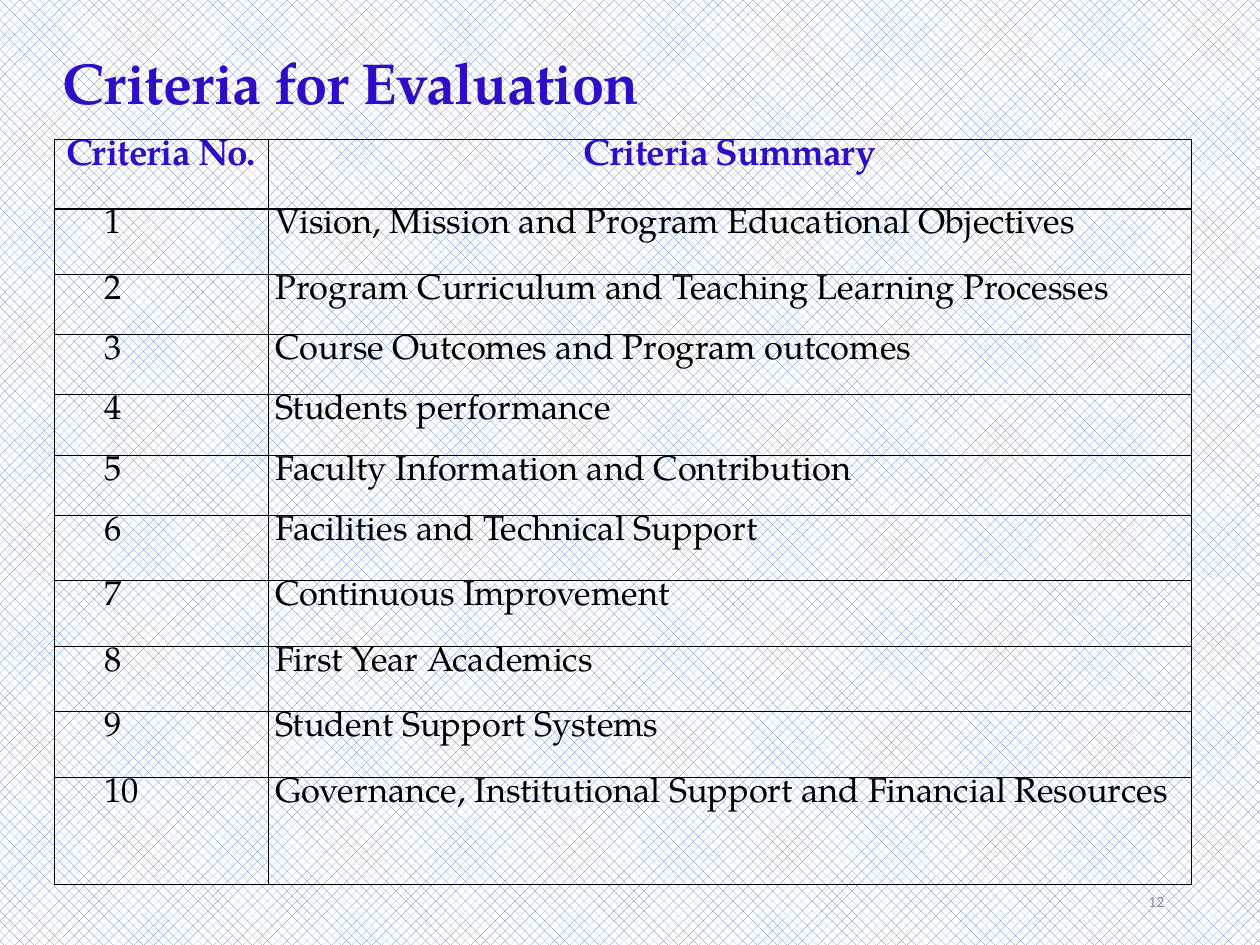
"""Build the slide that lists the ten criteria for evaluation."""
from lxml import etree
from pptx import Presentation
from pptx import util as u
from pptx.dml.color import RGBColor
from pptx.enum import dml, text
from pptx.oxml import ns

THEME = {
    "accent": "2F0CC6", "ink": "000000", "muted": "8C8C8C",
    "pattern": "4472C4", "paper": "FFFFFF",
    "serif": "TeX Gyre Pagella", "sans": "Calibri",
    "title": 47, "header": 30, "body": 28, "number": 12.8, "border": 1,
}
HEADINGS = ("Criteria No.", "Criteria Summary")
SUMMARIES = (
    "Vision, Mission and Program Educational Objectives",
    "Program Curriculum and Teaching Learning Processes",
    "Course Outcomes and Program outcomes",
    "Students performance",
    "Faculty Information and Contribution",
    "Facilities and Technical Support",
    "Continuous Improvement",
    "First Year Academics",
    "Student Support Systems",
    "Governance, Institutional Support and Financial Resources",
)
COLUMN_WIDTHS = (2.42, 10.42)
ROW_HEIGHTS = (0.78, 0.74, *[0.68] * 4, *[0.74] * 4, 1.21)
LEFT = 0.61


def write(paragraph, words, size, color, face="serif", bold=False, align="LEFT"):
    """Put one formatted run into a paragraph."""
    paragraph.alignment = getattr(text.PP_ALIGN, align)
    run = paragraph.add_run()
    run.text = words
    formats = {"name": THEME[face], "size": u.Pt(THEME[size]), "bold": bold}
    for name, value in formats.items():
        setattr(run.font, name, value)
    run.font.color.rgb = RGBColor.from_string(THEME[color])
    if bold:
        paragraph.line_spacing = 0.9
        run.font._element.set("spc", "-70")


def add_borders(cell):
    """Draw a thin line on all four sides of a cell."""
    properties = cell._tc.get_or_add_tcPr()
    for position, side in enumerate(("lnL", "lnR", "lnT", "lnB")):
        line = etree.Element(ns.qn(f"a:{side}"), w=str(u.Pt(THEME["border"])))
        fill = etree.SubElement(line, ns.qn("a:solidFill"))
        etree.SubElement(fill, ns.qn("a:srgbClr"), val=THEME["ink"])
        properties.insert(position, line)


presentation = Presentation()
presentation.slide_width = u.Inches(14.22)
presentation.slide_height = u.Inches(10.67)
slide = presentation.slides.add_slide(presentation.slide_layouts[5])

background = slide.background.fill
background.patterned()
background.pattern = dml.MSO_PATTERN.PERCENT_25
background.fore_color.rgb = RGBColor.from_string(THEME["pattern"])
background.back_color.rgb = RGBColor.from_string(THEME["paper"])

frame = slide.shapes.add_table(
    len(ROW_HEIGHTS), len(COLUMN_WIDTHS), u.Inches(LEFT), u.Inches(1.58),
    u.Inches(sum(COLUMN_WIDTHS)), u.Inches(sum(ROW_HEIGHTS)))
table = frame.table
for column, width in zip(table.columns, COLUMN_WIDTHS):
    column.width = u.Inches(width)
for row, height in zip(table.rows, ROW_HEIGHTS):
    row.height = u.Inches(height)

numbered = [(str(number), summary) for number, summary in enumerate(SUMMARIES, 1)]
cell_format = {"margin_left": u.Inches(0.08), "margin_right": u.Inches(0.08),
               "margin_top": 0, "margin_bottom": 0}
for row_index, entries in enumerate([HEADINGS, *numbered]):
    for column_index, words in enumerate(entries):
        cell = table.cell(row_index, column_index)
        for name, value in cell_format.items():
            setattr(cell, name, value)
        cell.fill.background()
        add_borders(cell)
        paragraph = cell.text_frame.paragraphs[0]
        if row_index == 0:
            write(paragraph, words, "header", "accent", bold=True, align="CENTER")
        else:
            write(paragraph, words, "body", "ink")
            if column_index == 0:
                paragraph._p.get_or_add_pPr().set("marL", str(u.Inches(0.49)))

page_number = slide.shapes.add_textbox(
    u.Inches(10.04), u.Inches(9.89), u.Inches(3.2), u.Inches(0.57))
write(page_number.text_frame.paragraphs[0], "12", "number", "muted", "sans", align="RIGHT")

title = slide.shapes.title
title_box = {"left": LEFT, "top": 0.49, "width": 8.83, "height": 0.95}
for name, value in title_box.items():
    setattr(title, name, u.Inches(value))
write(title.text_frame.paragraphs[0], "Criteria for Evaluation", "title", "accent", bold=True)

for shape in (page_number, title):
    shape.text_frame.word_wrap = True
    shape.text_frame.vertical_anchor = text.MSO_ANCHOR.MIDDLE

presentation.save("out.pptx")
